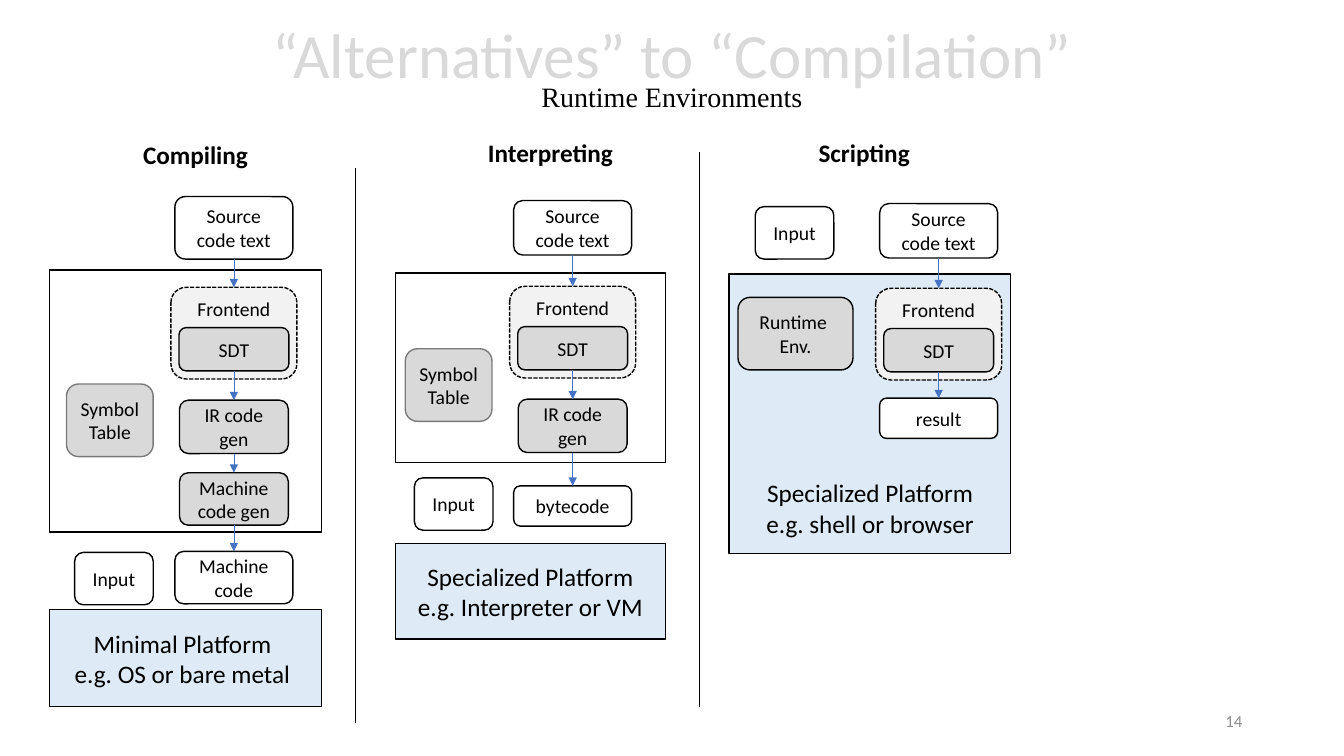
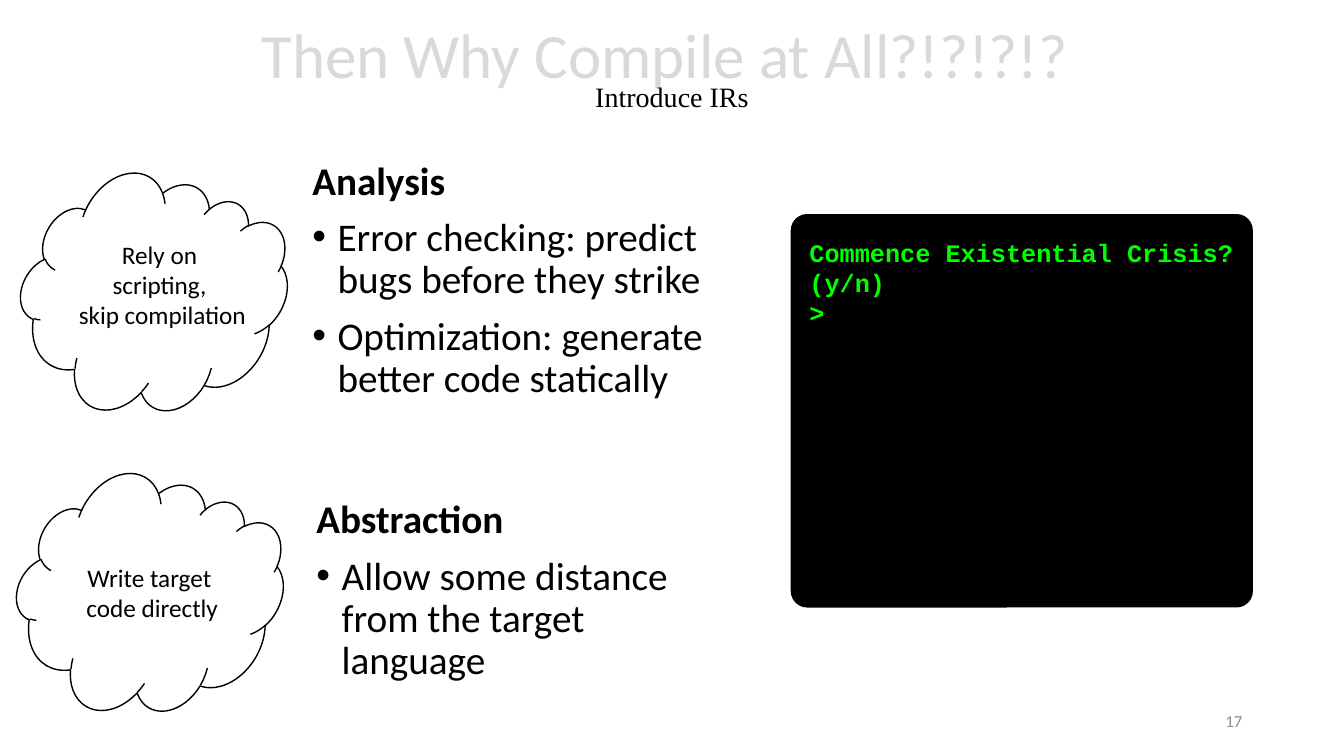
from lxml import etree
from pptx import Presentation
from pptx.dml.color import RGBColor
from pptx.enum.dml import MSO_LINE
from pptx.enum.shapes import MSO_CONNECTOR, MSO_SHAPE
from pptx.enum.text import MSO_ANCHOR, PP_ALIGN
from pptx.oxml.ns import qn
from pptx.util import Inches, Pt

BLACK = RGBColor(0x00, 0x00, 0x00)
WHITE = RGBColor(0xFF, 0xFF, 0xFF)
TITLE_GREY = RGBColor(0xD9, 0xD9, 0xD9)
STAGE_GREY = RGBColor(0xD9, 0xD9, 0xD9)
FRONTEND_GREY = RGBColor(0xF2, 0xF2, 0xF2)
EDGE_GREY = RGBColor(0x7A, 0x7A, 0x7A)
NUMBER_GREY = RGBColor(0x8C, 0x8C, 0x8C)
PLATFORM_BLUE = RGBColor(0xDE, 0xEB, 0xF7)
ARROW_BLUE = RGBColor(0x44, 0x72, 0xC4)
TERMINAL_GREEN = RGBColor(0x00, 0xFF, 0x00)

RECT, ROUND, CLOUD = MSO_SHAPE.RECTANGLE, MSO_SHAPE.ROUNDED_RECTANGLE, MSO_SHAPE.CLOUD
STRAIGHT, DASH = MSO_CONNECTOR.STRAIGHT, MSO_LINE.SQUARE_DOT
TOP, MIDDLE = MSO_ANCHOR.TOP, MSO_ANCHOR.MIDDLE
LEFT, CENTER, RIGHT = PP_ALIGN.LEFT, PP_ALIGN.CENTER, PP_ALIGN.RIGHT
BOTTOM_SIDE, TOP_SIDE = 2, 0
BODY_FONT, SUBTITLE_FONT, CODE_FONT = "Calibri", "Times New Roman", "Courier New"

# ---- Content: stages are (text, top, height), boxes are left, top, width, height
COLUMNS = [
    {
        "heading": ("Compiling", (1.32, 1.33, 1.25, 0.4)),
        "axis": 2.32,
        "frame": (0.49, 2.68, 2.7, 2.6),
        "platform": (0.49, 6.05, 2.7, 0.96),
        "label": (["Minimal Platform", "e.g. OS or bare metal"], (0.63, 6.18, 2.36, 0.71)),
        "source": (1.95, 0.62),
        "frontend": 2.85,
        "generators": [("IR code gen", 3.97, 0.53), ("Machine code gen", 4.69, 0.52)],
        "output": ("Machine code", 5.47, 0.52),
        "input": (0.74, 5.48),
        "store": (["Symbol Table"], (0.66, 3.81, 0.86, 0.72), EDGE_GREY),
    },
    {
        "heading": ("Interpreting", (4.74, 1.31, 1.45, 0.4)),
        "axis": 5.68,
        "frame": (3.92, 2.71, 2.68, 1.88),
        "platform": (3.92, 5.39, 2.68, 0.95),
        "label": (["Specialized Platform", "e.g. Interpreter or VM"], (3.92, 5.52, 2.68, 0.71)),
        "source": (1.99, 0.54),
        "frontend": 2.84,
        "generators": [("IR code gen", 3.96, 0.53)],
        "output": ("bytecode", 4.82, 0.4),
        "input": (4.11, 4.74),
        "store": (["Symbol Table"], (4.02, 3.46, 0.86, 0.72), EDGE_GREY),
    },
    {
        "heading": ("Scripting", (8.02, 1.31, 1.11, 0.4)),
        "axis": 9.31,
        "frame": None,
        "platform": (7.23, 2.72, 2.79, 2.77),
        "label": (["Specialized Platform", "e.g. shell or browser"], (7.49, 4.69, 2.28, 0.71)),
        "source": (2.02, 0.54),
        "frontend": 2.86,
        "generators": [],
        "output": ("result", 3.95, 0.4),
        "input": (7.49, 2.05),
        "store": (["Runtime ", "Env."], (7.32, 2.95, 1.14, 0.72), BLACK),
    },
]
DIVIDERS = [(3.52, 1.67), (6.94, 1.51)]  # x, top
DIVIDER_LENGTH = 5.5

CLOUDS = [  # left and top of the cloud, lines, text area
    (0.28, 1.71, ["Rely on ", "scripting, ", "skip compilation"], (0.67, 2.32, 1.88, 1.01)),
    (0.24, 4.69, ["Write target ", "code directly"], (0.75, 5.53, 1.52, 0.71)),
]
REASONS = [
    ("Analysis",
     ["Error checking: predict bugs before they strike",
      "Optimization: generate better code statically"],
     (3, 1.55, 4.6, 2.74)),
    ("Abstraction",
     ["Allow some distance from the target language"],
     (3.04, 4.91, 4.11, 2.02)),
]
TERMINAL_LINES = ["Commence Existential Crisis?", "(y/n)", ">"]


# ---- Helpers
def add_span(para, text, size=18, font=BODY_FONT, color=BLACK, bold=False):
    span = para.add_run()
    span.text = text
    span.font.size = Pt(size)
    span.font.name = font
    span.font.color.rgb = color
    span.font.bold = bold


def write(box, lines, align=LEFT, anchor=TOP, wrap=True, **style):
    frame = box.text_frame
    frame.word_wrap = wrap
    frame.vertical_anchor = anchor
    for index, line in enumerate(lines):
        para = frame.add_paragraph() if index else frame.paragraphs[0]
        para.alignment = align
        add_span(para, line, **style)
    return box


def add_text(page, area, lines, **style):
    return write(page.shapes.add_textbox(*map(Inches, area)), lines, **style)


def add_box(page, kind, area, fill=WHITE, line=BLACK, dash=None):
    box = page.shapes.add_shape(kind, *map(Inches, area))
    box.shadow.inherit = False
    box.fill.solid()
    box.fill.fore_color.rgb = fill
    box.line.color.rgb = line
    box.line.width = Pt(1)
    if dash:
        box.line.dash_style = dash
    return box


def add_node(page, area, lines, anchor=MIDDLE, **look):
    box = add_box(page, ROUND, area, **look)
    return write(box, lines, align=CENTER, anchor=anchor, size=14)


def add_line(page, start, end, color):
    line = page.shapes.add_connector(STRAIGHT, *map(Inches, start + end))
    line.line.color.rgb = color
    line.line.width = Pt(0.5)
    etree.SubElement(line.element.spPr, qn("a:effectLst"))
    return line


def add_arrow(page, upper, lower):
    arrow = add_line(page, (0, 0), (1, 1), ARROW_BLUE)
    arrow.begin_connect(upper, BOTTOM_SIDE)
    arrow.end_connect(lower, TOP_SIDE)
    etree.SubElement(arrow.line._get_or_add_ln(), qn("a:tailEnd"), type="triangle")


def add_bullet(para):
    props = para._p.get_or_add_pPr()
    props.set("marL", str(Inches(0.25)))
    props.set("indent", str(-Inches(0.25)))
    etree.SubElement(props, qn("a:buFont"), typeface="Arial")
    etree.SubElement(props, qn("a:buChar"), char="•")


def add_page(deck, title, subtitle, number):
    page = deck.slides.add_slide(deck.slide_layouts[6])
    box = add_text(page, (0, 0.01, 13.33, 1.45), [title], align=CENTER,
                   anchor=MIDDLE, size=45, color=TITLE_GREY)
    para = box.text_frame.paragraphs[0]
    para.line_spacing = 0.7
    para.add_line_break()
    add_span(para, subtitle, size=20, font=SUBTITLE_FONT)
    add_text(page, (9.42, 6.95, 3, 0.4), [str(number)], align=RIGHT,
             anchor=MIDDLE, size=12, color=NUMBER_GREY)
    return page


# ---- Slide parts
def add_column(page, column):
    def stage(text, top, height, width, **look):
        area = (column["axis"] - width / 2, top, width, height)
        return add_node(page, area, [text], **look)

    heading, area = column["heading"]
    add_text(page, area, [heading], wrap=False, bold=True)
    if column["frame"]:
        add_box(page, RECT, column["frame"])
    add_box(page, RECT, column["platform"], fill=PLATFORM_BLUE)
    label, area = column["label"]
    add_text(page, area, label, align=CENTER, wrap=False)

    # Pipeline from source to output
    top = column["frontend"]
    source = stage("Source code text", *column["source"], 1.17)
    frontend = stage("Frontend", top, 0.91, 1.25, anchor=TOP, fill=FRONTEND_GREY, dash=DASH)
    chain = [stage("SDT", top + 0.4, 0.43, 1.09, fill=STAGE_GREY)]
    chain += [stage(*step, 1.08, fill=STAGE_GREY) for step in column["generators"]]
    chain.append(stage(*column["output"], 1.17))
    for upper, lower in [(source, frontend), *zip(chain, chain[1:])]:
        add_arrow(page, upper, lower)

    # Side boxes
    store, area, edge = column["store"]
    add_node(page, area, store, fill=STAGE_GREY, line=edge)
    add_node(page, column["input"] + (0.78, 0.52), ["Input"])


def add_cloud(page, left, top, lines, area):
    cloud = add_box(page, CLOUD, (left, top, 2.45, 2.47))
    cloud.rotation = 30.7
    # Hides the inner arc of the cloud
    add_box(page, RECT, (left + 1.57, top + 1.45, 0.42, 0.48), line=WHITE)
    add_text(page, area, lines, align=CENTER, wrap=False)


def add_reason(page, heading, bullets, area):
    box = add_text(page, area, [heading, *bullets], size=28)
    paras = box.text_frame.paragraphs
    for para in paras:
        para.line_spacing = 0.9
        para.space_before = Pt(10)
    paras[0].runs[0].font.bold = True
    for para in paras[1:]:
        add_bullet(para)


def main():
    deck = Presentation()
    deck.slide_width, deck.slide_height = Inches(13.33), Inches(7.5)

    # Runtime environments
    page = add_page(deck, "“Alternatives” to “Compilation”", "Runtime Environments", 14)
    for column in COLUMNS:
        add_column(page, column)
    for x, top in DIVIDERS:
        add_line(page, (x, top), (x, top + DIVIDER_LENGTH), BLACK)

    # Reasons to compile
    page = add_page(deck, "Then Why Compile at All?!?!?!? ", "Introduce IRs", 17)
    terminal = add_box(page, ROUND, (7.85, 2.13, 4.57, 3.89), fill=BLACK)
    terminal.adjustments[0] = 0.04
    add_text(page, (7.93, 2.3, 4.57, 1.01), TERMINAL_LINES, wrap=False,
             font=CODE_FONT, color=TERMINAL_GREEN, bold=True)
    for reason in REASONS:
        add_reason(page, *reason)
    for cloud in CLOUDS:
        add_cloud(page, *cloud)

    deck.save("out.pptx")


if __name__ == "__main__":
    main()
